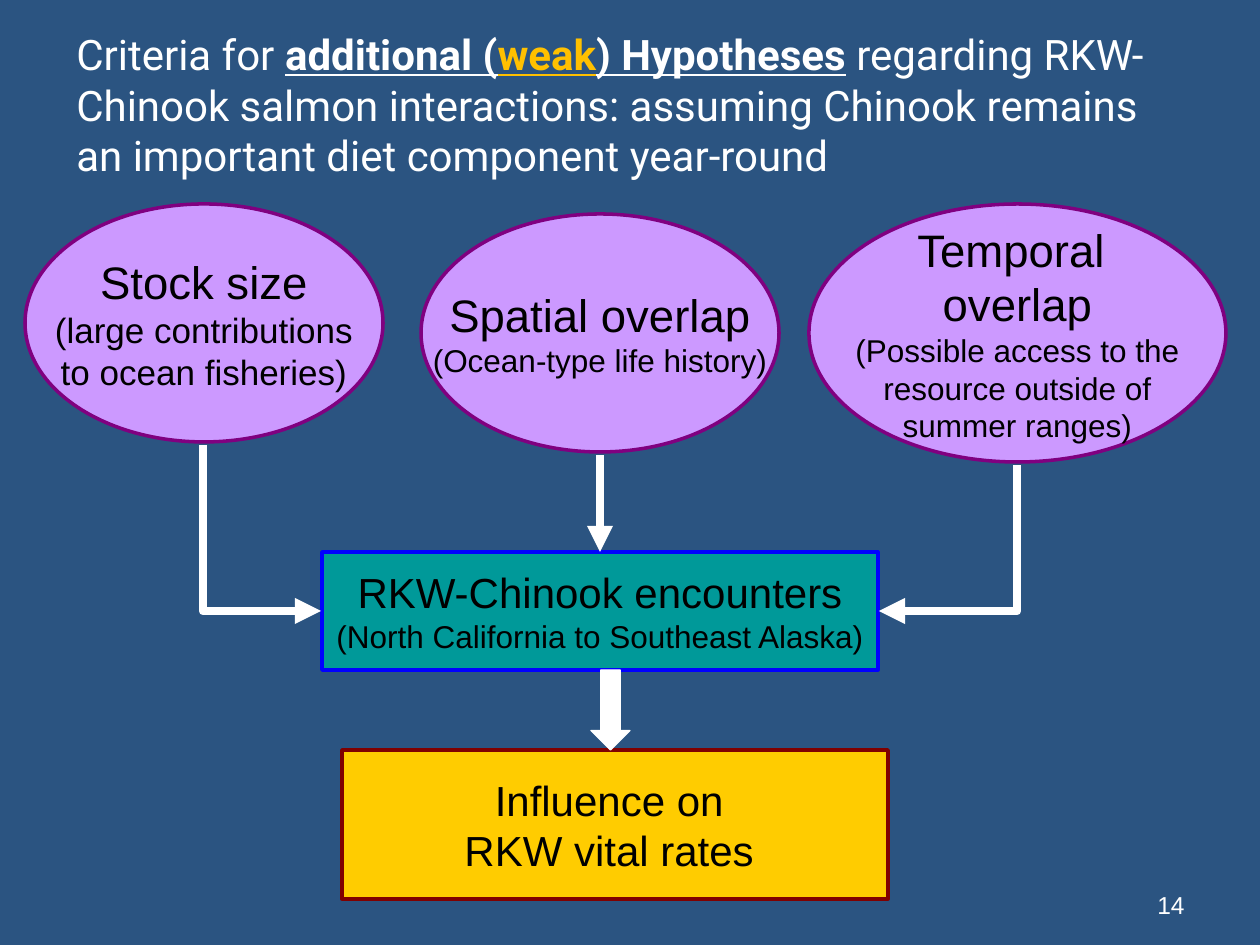
from lxml.etree import SubElement
from pptx import Presentation
from pptx.dml.color import RGBColor
from pptx.enum.shapes import MSO_CONNECTOR, MSO_SHAPE
from pptx.enum.text import MSO_ANCHOR, PP_ALIGN
from pptx.oxml.ns import qn
from pptx.util import Emu, Pt

COLORS = {
    "background": "2B5481", "white": "FFFFFF", "black": "000000",
    "weak": "FFC000", "lilac": "CC99FF", "purple": "800080",
    "teal": "009999", "blue": "0000FF", "yellow": "FFCC00", "maroon": "800000",
}


def px(length):
    return Emu(round(length * 914400 / 126))


def rgb(name):
    return RGBColor.from_string(COLORS[name])


class HypothesisSlide:
    """Holds the style and the current slide, and draws each kind of element."""

    font = "Arial"
    title_font = "Roboto"
    outline = Pt(2)
    arrow_width = Pt(5)

    def __init__(self, prs):
        self.slide = prs.slides.add_slide(prs.slide_layouts[6])
        fill = self.slide.background.fill
        fill.solid()
        fill.fore_color.rgb = rgb("background")

    def add_run(self, paragraph, text, size, color, font=None, strong=False):
        run = paragraph.add_run()
        run.text = text
        run.font.name = font or self.font
        run.font.size = Pt(size)
        run.font.color.rgb = rgb(color)
        if strong:
            run.font.bold = run.font.underline = True

    def text(self, box, runs, size, font, align, anchor):
        frame = self.slide.shapes.add_textbox(*map(px, box)).text_frame
        frame.word_wrap = True
        frame.vertical_anchor = anchor
        paragraph = frame.paragraphs[0]
        paragraph.alignment = align
        for words, color, strong in runs:
            self.add_run(paragraph, words, size, color, font, strong)

    def shape(self, kind, box, fill, line, lines=(), width=None):
        shape = self.slide.shapes.add_shape(kind, *map(px, box))
        shape.shadow.inherit = False
        shape.fill.solid()
        shape.fill.fore_color.rgb = rgb(fill)
        shape.line.color.rgb = rgb(line)
        shape.line.width = width or self.outline
        frame = shape.text_frame
        frame.word_wrap = False
        frame.vertical_anchor = MSO_ANCHOR.MIDDLE
        for index, (words, size) in enumerate(lines):
            paragraph = frame.add_paragraph() if index else frame.paragraphs[0]
            paragraph.alignment = PP_ALIGN.CENTER
            self.add_run(paragraph, words, size, "black")
        return shape

    def factor(self, box, lines):
        return self.shape(MSO_SHAPE.OVAL, box, "lilac", "purple", lines)

    def arrow(self, kind, start, end):
        connector = self.slide.shapes.add_connector(kind, *map(px, start + end))
        connector.line.color.rgb = rgb("white")
        connector.line.width = self.arrow_width
        SubElement(connector.line._get_or_add_ln(), qn("a:tailEnd"), type="triangle")
        SubElement(connector._element.spPr, qn("a:effectLst"))
        return connector

    def down_then_across(self, start, end):
        (x1, y1), (x2, y2) = start, end
        center_x, center_y = (x1 + x2) / 2, (y1 + y2) / 2
        side = 1 if x2 > x1 else -1
        half_w, half_h = side * (y2 - y1) / 2, abs(x2 - x1) / 2
        connector = self.arrow(
            MSO_CONNECTOR.ELBOW,
            (center_x + half_w, center_y - half_h),
            (center_x - half_w, center_y + half_h),
        )
        properties = connector._element.spPr
        properties.find(qn("a:prstGeom")).set("prst", "bentConnector2")
        degrees = 270 if side > 0 else 90
        properties.find(qn("a:xfrm")).set("rot", str(degrees * 60000))


def main():
    prs = Presentation()
    prs.slide_width, prs.slide_height = px(1260), px(945)
    page = HypothesisSlide(prs)

    page.text((903, 861, 294, 65), [("14", "white", False)], 14, page.font,
              PP_ALIGN.RIGHT, MSO_ANCHOR.BOTTOM)
    page.text((64, 26, 1134, 157), [
        ("Criteria for ", "white", False),
        ("additional (", "white", True),
        ("weak", "weak", True),
        (") Hypotheses", "white", True),
        (" regarding RKW-Chinook salmon interactions: assuming Chinook remains "
         "an important diet component year-round", "white", False),
    ], 24, page.title_font, PP_ALIGN.LEFT, MSO_ANCHOR.MIDDLE)

    encounters = page.shape(
        MSO_SHAPE.RECTANGLE, (322, 552, 556, 118), "teal", "blue",
        [("RKW-Chinook encounters", 24),
         ("(North California to Southeast Alaska)", 18)])
    page.shape(MSO_SHAPE.RECTANGLE, (342, 750, 546, 149), "yellow", "maroon",
               [("Influence on ", 24), ("RKW vital rates ", 24)])
    page.shape(MSO_SHAPE.DOWN_ARROW, (591, 670, 39, 80), "white", "white",
               width=Pt(0.75))

    page.factor((25, 204, 358, 238), [
        ("Stock size", 26), ("(large contributions", 20),
        ("to ocean fisheries)", 20)])
    page.factor((421, 214, 358, 238), [
        ("Spatial overlap", 26), ("(Ocean-type life history)", 18)])
    page.factor((809, 204, 417, 258), [
        ("Temporal ", 26), ("overlap", 26), ("(Possible access to the", 18),
        ("resource outside of", 18), ("summer ranges)", 18)])

    page.down_then_across((203, 445), (321, 611))
    page.down_then_across((1017, 465), (879, 611))
    spatial_arrow = page.arrow(MSO_CONNECTOR.STRAIGHT, (600, 455), (600, 552))
    spatial_arrow.end_connect(encounters, 0)

    prs.save("out.pptx")


if __name__ == "__main__":
    main()
